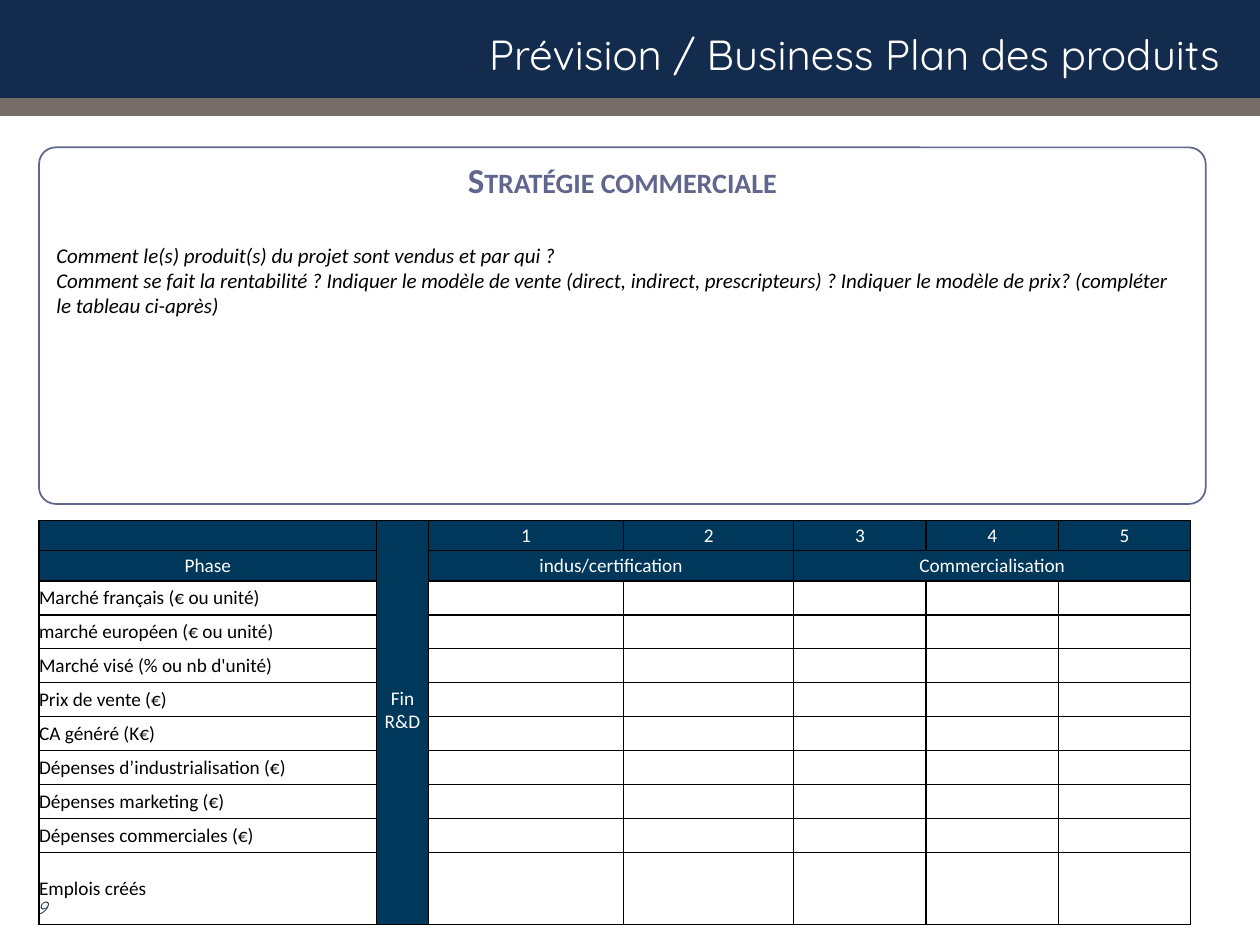
"""Build the product forecast and business plan slide."""
from dataclasses import dataclass

from lxml import etree
from pptx import Presentation
from pptx import util as u
from pptx.dml.color import RGBColor
from pptx.enum import shapes, text
from pptx.oxml.ns import qn


@dataclass(frozen=True)
class Theme:
    navy: str = "132C4D"
    taupe: str = "766C68"
    header: str = "00385B"
    accent: str = "60668D"
    white: str = "FFFFFF"
    black: str = "000000"
    display: str = "Quicksand"
    body: str = "Calibri"
    title: int = 24
    heading: int = 20
    prose: int = 12
    cell: int = 11
    number: int = 10


THEME = Theme()
CENTER, LEFT, RIGHT = text.PP_ALIGN.CENTER, text.PP_ALIGN.LEFT, text.PP_ALIGN.RIGHT

TITLE = "Prévision / Business Plan des produits"
PAGE_NUMBER = "9"
STRATEGY_HEADING = "Stratégie commerciale"
STRATEGY_QUESTIONS = [
    "Comment le(s) produit(s) du projet sont vendus et par qui ?",
    "Comment se fait la rentabilité ? Indiquer le modèle de vente (direct, indirect, "
    "prescripteurs) ? Indiquer le modèle de prix? (compléter le tableau ci-après)",
]
YEARS = ["1", "2", "3", "4", "5"]
PHASES = [("indus/certification", 2, 3), ("Commercialisation", 4, 6)]
MILESTONE = "Fin\nR&D"
INDICATORS = [
    "Marché français (€ ou unité)",
    "marché européen (€ ou unité)",
    "Marché visé (% ou nb d'unité)",
    "Prix de vente (€)",
    "CA généré (K€)",
    "Dépenses d’industrialisation (€)",
    "Dépenses marketing (€)",
    "Dépenses commerciales (€)",
    "Emplois créés",
]
BANDS = [(0, 0.9, THEME.navy), (0.78, 0.14, THEME.taupe)]
COLUMNS = [2.68, 0.41, 1.55, 1.35] + [1.05] * 3
ROWS = [0.24] * 2 + [0.27] * (len(INDICATORS) - 1) + [0.57]
MARGIN = 0.31


def inches(*lengths):
    return [u.Inches(length) for length in lengths]


def write(para, size, color, font=THEME.body, align=LEFT, bold=False, italic=False):
    para.alignment = align
    for span in para.runs:
        span.font.name, span.font.size = font, u.Pt(size)
        span.font.bold, span.font.italic = bold, italic
        span.font.color.rgb = RGBColor.from_string(color)


def paint(item, color):
    item.fill.solid()
    item.fill.fore_color.rgb = RGBColor.from_string(color)


def add_bands(page):
    for top, height, color in BANDS:
        band = page.shapes.add_shape(
            shapes.MSO_SHAPE.RECTANGLE, *inches(0, top, 10, height))
        paint(band, color)
        band.line.fill.background()
        band.shadow.inherit = False


def add_title(page):
    title = page.shapes.title
    title.left, title.top, title.width, title.height = inches(0.15, 0.14, 9.63, 0.58)
    title.text_frame.text = TITLE
    title.text_frame.vertical_anchor = text.MSO_ANCHOR.MIDDLE
    write(title.text_frame.paragraphs[0], THEME.title, THEME.white, THEME.display, RIGHT)
    page.shapes._spTree.append(title._element)


def add_page_number(page):
    box = page.shapes.add_textbox(*inches(-0.04, 7, 0.51, 0.4))
    box.text_frame.word_wrap = True
    box.text_frame.vertical_anchor = text.MSO_ANCHOR.MIDDLE
    box.text_frame.text = PAGE_NUMBER
    write(box.text_frame.paragraphs[0], THEME.number, THEME.navy, THEME.display, RIGHT,
          italic=True)


def style_cell(cell, row, column):
    is_header = row < 2 or column == 1
    cell.margin_left = cell.margin_right = cell.margin_top = cell.margin_bottom = 0
    cell.vertical_anchor = text.MSO_ANCHOR.MIDDLE
    properties = cell._tc.get_or_add_tcPr()
    for side in ("lnL", "lnR", "lnT", "lnB"):
        border = etree.SubElement(properties, qn(f"a:{side}"), w=str(u.Pt(1)))
        fill = etree.SubElement(border, qn("a:solidFill"))
        etree.SubElement(fill, qn("a:srgbClr"), val=THEME.black)
    if is_header:
        paint(cell, THEME.header)
    elif column == 0:
        cell.fill.background()
    else:
        paint(cell, THEME.white)
    for para in cell.text_frame.paragraphs:
        write(para, THEME.cell, THEME.white if is_header else THEME.black,
              align=CENTER if is_header else LEFT)
        para._p.get_or_add_endParaRPr().set("sz", str(THEME.cell * 100))


def add_forecast(page):
    frame = page.shapes.add_table(
        len(ROWS), len(COLUMNS), *inches(MARGIN, 4.13, sum(COLUMNS), sum(ROWS)))
    table = frame.table
    table.first_row = table.horz_banding = False
    for column, width in zip(table.columns, COLUMNS):
        column.width = u.Inches(width)
    for row, height in zip(table.rows, ROWS):
        row.height = u.Inches(height)
    for column, year in enumerate(YEARS, start=2):
        table.cell(0, column).text = year
    for row, label in enumerate(["Phase"] + INDICATORS, start=1):
        table.cell(row, 0).text = label
    for phase, first, last in PHASES:
        table.cell(1, first).text = phase
        table.cell(1, first).merge(table.cell(1, last))
    milestone = table.cell(0, 1)
    milestone.text = MILESTONE
    milestone.merge(table.cell(len(ROWS) - 1, 1))
    for row in range(len(ROWS)):
        for column in range(len(COLUMNS)):
            style_cell(table.cell(row, column), row, column)
    milestone.margin_bottom = u.Inches(0.19)


def add_strategy(page):
    panel = page.shapes.add_shape(
        shapes.MSO_SHAPE.ROUNDED_RECTANGLE, *inches(MARGIN, 1.17, 9.26, 2.83))
    panel.adjustments[0] = 0.047
    panel.fill.background()
    panel.line.color.rgb = RGBColor.from_string(THEME.accent)
    panel.line.width = u.Pt(1)
    panel.shadow.inherit = False
    frame = panel.text_frame
    frame.word_wrap = True
    frame.vertical_anchor = text.MSO_ANCHOR.TOP
    frame.text = "\n".join([STRATEGY_HEADING] + STRATEGY_QUESTIONS)
    heading, *questions = frame.paragraphs
    write(heading, THEME.heading, THEME.accent, align=CENTER, bold=True)
    heading.runs[0].font._element.set("cap", "small")
    heading.space_after = u.Pt(24)
    for question in questions:
        write(question, THEME.prose, THEME.black, italic=True)


def main():
    deck = Presentation()
    deck.slide_width, deck.slide_height = inches(10, 7.5)
    page = deck.slides.add_slide(deck.slide_layouts[5])
    for add_part in (add_bands, add_title, add_page_number, add_forecast, add_strategy):
        add_part(page)
    deck.save("out.pptx")


if __name__ == "__main__":
    main()
